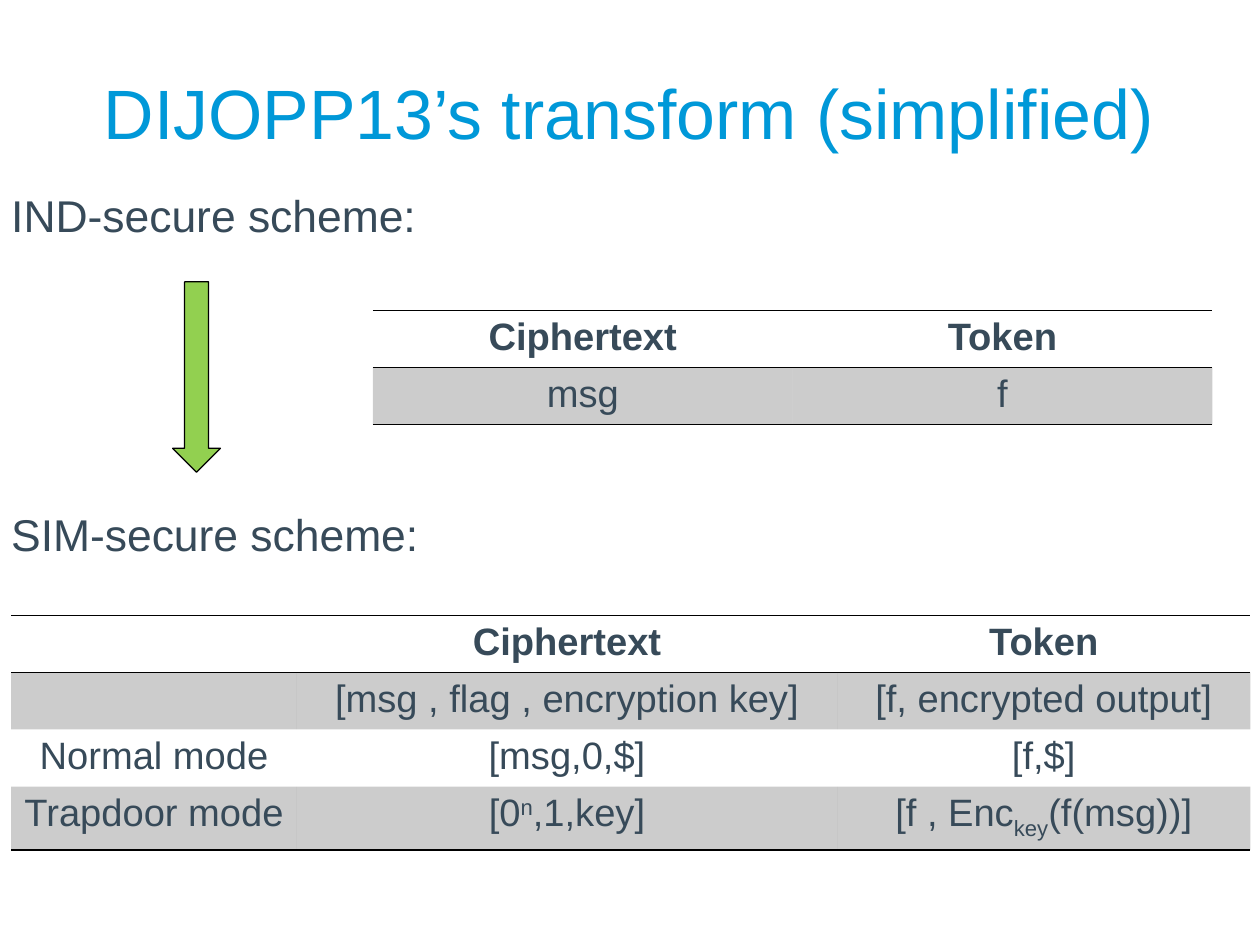
from lxml import etree
from pptx import Presentation
from pptx import util as u
from pptx.dml.color import RGBColor
from pptx.enum import shapes, text
from pptx.oxml.ns import qn

# Content: a cell is a list of (text, baseline shift in percent) runs
TITLE = "DIJOPP13’s transform (simplified)"
LABELS = [("IND-secure scheme:", 118), ("SIM-secure scheme:", 318.6)]


def plain(words):
    return [(words, 0)]


IND_ROWS = [
    [plain("Ciphertext"), plain("Token")],
    [plain("msg"), plain("f")],
]
SIM_ROWS = [
    [[], plain("Ciphertext"), plain("Token")],
    [[], plain("[msg , flag , encryption key]"), plain("[f, encrypted output]")],
    [plain("Normal mode"), plain("[msg,0,$]"), plain("[f,$]")],
    [plain("Trapdoor mode"), [("[0", 0), ("n", 30), (",1,key]", 0)],
     [("[f , Enc", 0), ("key", -25), ("(f(msg))]", 0)]],
]
# rows, left, top, column widths, row heights
TABLES = [
    (IND_ROWS, 234.9, 195.5, [264.4, 264.4], [36, 36]),
    (SIM_ROWS, 7, 387.5, [180, 340.4, 260.3], [36, 36, 36, 40]),
]
COLORS = {"title": "0098D8", "body": "374A59", "rule": "000000", "arrow": "92D050"}
FONT = "Arial"
LINE_SPACING = 0.93


def color(name):
    return RGBColor.from_string(COLORS[name])


def write(frame, runs, size, ink="body", bold=False, align=text.PP_ALIGN.CENTER):
    paragraph = frame.paragraphs[0]
    paragraph.alignment = align
    paragraph.line_spacing = LINE_SPACING
    for words, shift in runs:
        run = paragraph.add_run()
        run.text = words
        run.font.name = FONT
        run.font.size = u.Pt(size)
        run.font.bold = bold
        run.font.color.rgb = color(ink)
        if shift:
            run.font._element.set("baseline", str(shift * 1000))


def add_text(slide, box, runs, size, **style):
    frame = slide.shapes.add_textbox(*map(u.Pt, box)).text_frame
    frame.word_wrap = True
    write(frame, runs, size, **style)
    return frame


def set_borders(cell, ruled):
    properties = cell._tc.get_or_add_tcPr()
    for position, side in enumerate("LRTB"):
        line = etree.Element(qn("a:ln" + side), w=str(u.Pt(1)))
        if side in ruled:
            fill = etree.SubElement(line, qn("a:solidFill"))
            etree.SubElement(fill, qn("a:srgbClr"), val=COLORS["rule"])
        else:
            etree.SubElement(line, qn("a:noFill"))
        properties.insert(position, line)


def shade(cell, shaded):
    if not shaded:
        cell.fill.background()
        return
    cell.fill.solid()
    cell.fill.fore_color.rgb = color("rule")
    tint = cell._tc.tcPr.find(qn("a:solidFill"))[0]
    etree.SubElement(tint, qn("a:alpha"), val="20000")


def add_table(slide, rows, left, top, widths, heights):
    box = map(u.Pt, (left, top, sum(widths), sum(heights)))
    table = slide.shapes.add_table(len(rows), len(widths), *box).table
    table.first_row = table.horz_banding = False
    for column, width in zip(table.columns, widths):
        column.width = u.Pt(width)
    for index, (row, height) in enumerate(zip(rows, heights)):
        table.rows[index].height = u.Pt(height)
        # Rules above and below the header, and below the last row
        ruled = {0: "TB", 1: "T"}.get(index, "")
        if index == len(rows) - 1:
            ruled += "B"
        for place, runs in enumerate(row):
            cell = table.cell(index, place)
            shade(cell, index % 2 == 1)
            set_borders(cell, ruled)
            # A subscript already pushes its line down
            has_subscript = any(shift < 0 for words, shift in runs)
            cell.margin_top = u.Pt(3.6 if has_subscript else 5.2)
            write(cell.text_frame, runs, 24, bold=index == 0)


def main():
    presentation = Presentation()
    presentation.slide_width = u.Pt(793.75)
    presentation.slide_height = u.Pt(595.25)
    slide = presentation.slides.add_slide(presentation.slide_layouts[6])

    # Title
    frame = add_text(slide, (39.6, 23.4, 714, 99), plain(TITLE), 44, ink="title")
    frame.vertical_anchor = text.MSO_ANCHOR.MIDDLE
    frame.margin_left = frame.margin_right = 0
    frame.margin_top = frame.margin_bottom = 0

    # Scheme labels
    for words, top in LABELS:
        add_text(slide, (0, top, 300, 39), plain(words), 28,
                 align=text.PP_ALIGN.LEFT)

    # Tables
    for table in TABLES:
        add_table(slide, *table)

    # Arrow from the first scheme to the second
    arrow = slide.shapes.add_shape(shapes.MSO_SHAPE.DOWN_ARROW,
                                   *map(u.Pt, (108.7, 177.5, 30.2, 120)))
    arrow.shadow.inherit = False
    arrow.fill.solid()
    arrow.fill.fore_color.rgb = color("arrow")
    arrow.line.color.rgb = color("rule")
    arrow.line.width = u.Pt(0.75)

    presentation.save("out.pptx")


if __name__ == "__main__":
    main()
